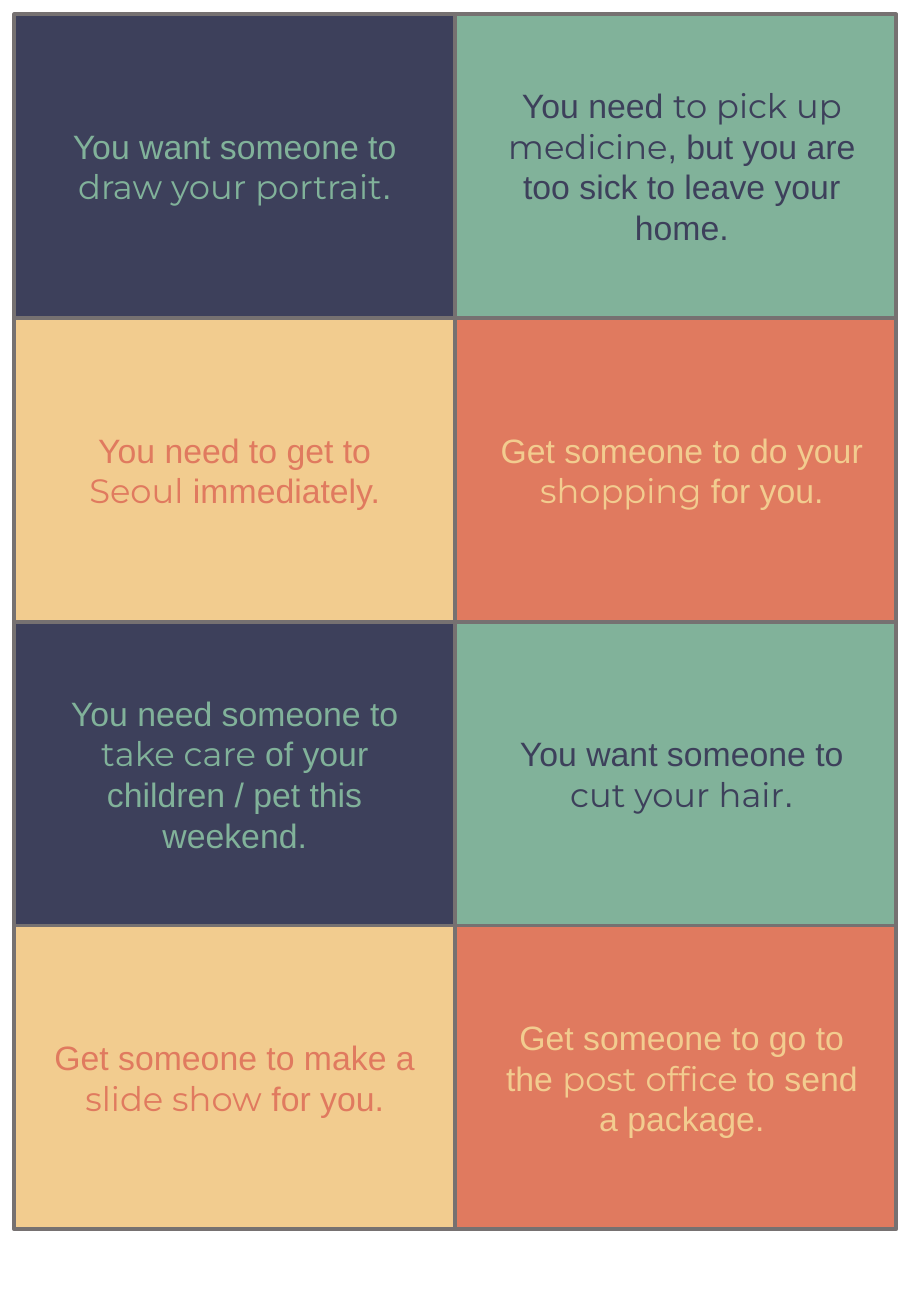
"""Build a sheet of eight role-play cards about asking someone for a favour."""
import pptx
import pptx.util
from pptx.dml.color import RGBColor
from pptx.enum.shapes import MSO_SHAPE
from pptx.enum.text import MSO_ANCHOR, MSO_AUTO_SIZE, PP_ALIGN

Cm = pptx.util.Cm
Pt = pptx.util.Pt

NAVY, GREEN, SAND, CORAL, GREY = "3D405B", "81B29A", "F2CC8F", "E07A5F", "767171"
CARD_COLOURS = [
    [(NAVY, GREEN), (GREEN, NAVY)],
    [(SAND, CORAL), (CORAL, SAND)],
]
CARDS = [
    [(2, "You want someone to ", "draw your portrait", "."),
     (4, "You need ", "to pick up medicine", ", but you are too sick to leave your home.")],
    [(2, "You need to get to ", "Seoul", " immediately."),
     (2, "Get someone to do your ", "shopping", " for you.")],
    [(4, "You need someone to ", "take care ", "of your children / pet this weekend."),
     (2, "You want someone to ", "cut your hair", ".")],
    [(2, "Get someone to make a ", "slide show", " for you."),
     (3, "Get someone to go to the ", "post office ", "to send a package.")],
]
RUN_FONTS = ["Arial", "Montserrat", "Arial"]

MARGIN = 0.3
CARD_WIDTH, CARD_HEIGHT = 9.22, 6.35
TEXT_WIDTH, TEXT_INSETS = 8.2, [0.51, 0.64]
LINE_HEIGHT, TEXT_PADDING = 0.86, 0.24


def paint(colour_format, colour):
    colour_format.rgb = RGBColor.from_string(colour)


def add_card(slide, left, top, colour):
    card = slide.shapes.add_shape(
        MSO_SHAPE.RECTANGLE, Cm(left), Cm(top), Cm(CARD_WIDTH), Cm(CARD_HEIGHT))
    card.shadow.inherit = False
    card.fill.solid()
    paint(card.fill.fore_color, colour)
    paint(card.line.color, GREY)
    card.line.width = Pt(2.25)


def add_prompt(slide, left, card_top, colour, line_count, parts):
    height = TEXT_PADDING + LINE_HEIGHT * line_count
    top = card_top + (CARD_HEIGHT - height) / 2
    prompt = slide.shapes.add_textbox(Cm(left), Cm(top), Cm(TEXT_WIDTH), Cm(height))
    frame = prompt.text_frame
    frame.word_wrap = True
    frame.auto_size = MSO_AUTO_SIZE.SHAPE_TO_FIT_TEXT
    frame.vertical_anchor = MSO_ANCHOR.MIDDLE
    paragraph = frame.paragraphs[0]
    paragraph.alignment = PP_ALIGN.CENTER
    paragraph.font.size = Pt(20)
    paint(paragraph.font.color, colour)
    for text, font_name in zip(parts, RUN_FONTS):
        run = paragraph.add_run()
        run.text = text
        run.font.name = font_name
        run.font.size = Pt(20)
        paint(run.font.color, colour)


def main():
    presentation = pptx.Presentation()
    presentation.slide_width = Cm(19.05)
    presentation.slide_height = Cm(27.51)
    slide = presentation.slides.add_slide(presentation.slide_layouts[6])
    for row, cards in enumerate(CARDS):
        top = MARGIN + row * CARD_HEIGHT
        for column, (line_count, *parts) in enumerate(cards):
            left = MARGIN + column * CARD_WIDTH
            fill, ink = CARD_COLOURS[row % 2][column]
            add_card(slide, left, top, fill)
            add_prompt(slide, left + TEXT_INSETS[column], top, ink, line_count, parts)
    presentation.save("out.pptx")


if __name__ == "__main__":
    main()
